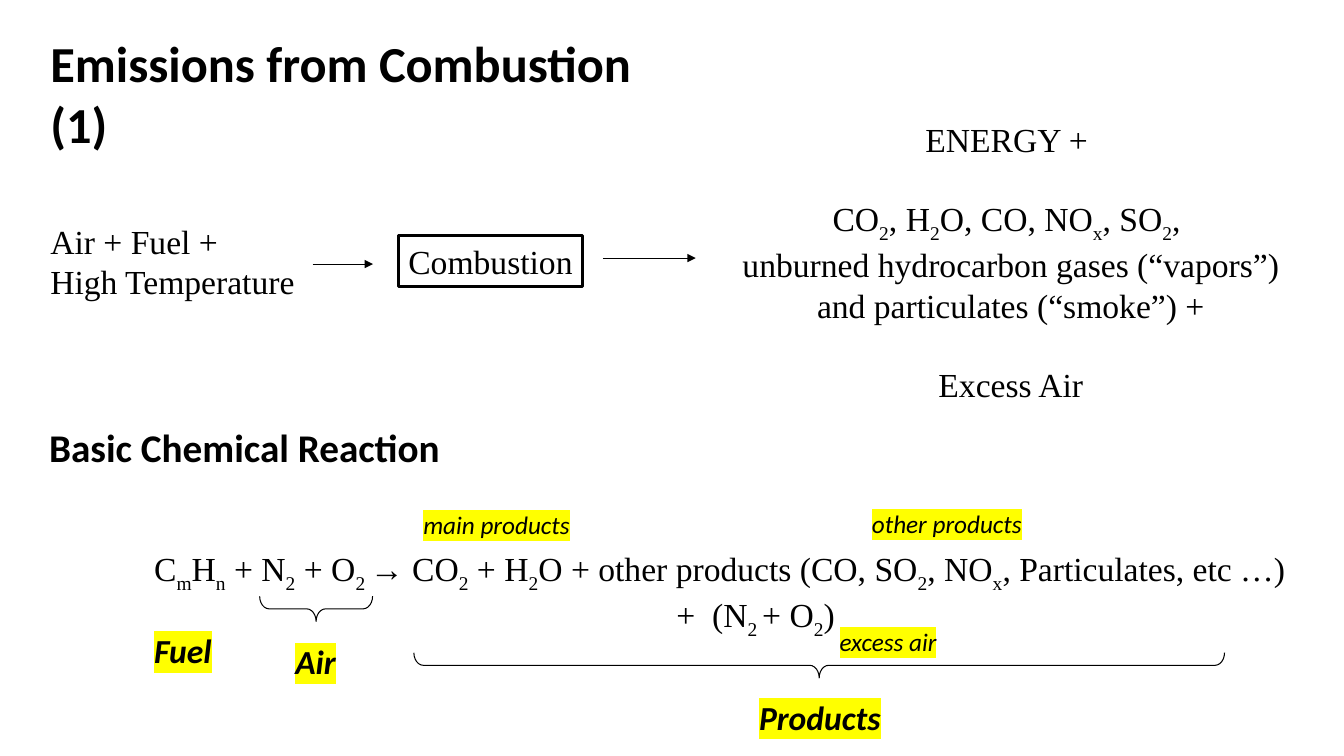
"""Build the slide on emissions from combustion and its basic reaction."""
from lxml.etree import SubElement
from pptx import Presentation
from pptx.dml.color import RGBColor
from pptx.enum.shapes import MSO_CONNECTOR as LINE, MSO_SHAPE as SHAPE
from pptx.enum.text import MSO_ANCHOR as ANCHOR, MSO_AUTO_SIZE as FIT, PP_ALIGN as ALIGN
from pptx.oxml.ns import qn
from pptx.util import Pt

PX = 9144
BLACK = RGBColor(0, 0, 0)
YELLOW = RGBColor(255, 255, 0)
SERIF, SANS = "Times New Roman", "Calibri"


def write(shape, lines, size, font, bold=False, italic=False, align=ALIGN.LEFT, mark=None):
    """Fill a shape with lines, where underscores enclose subscripts."""
    frame = shape.text_frame
    frame.auto_size = FIT.NONE
    for i, line in enumerate(lines):
        para = frame.add_paragraph() if i else frame.paragraphs[0]
        para.alignment = align
        for j, part in enumerate(line.split("_")):
            if not part:
                continue
            run = para.add_run()
            run.text = part
            run.font.size, run.font.name = Pt(size), font
            run.font.bold, run.font.italic = bold, italic
            run.font.color.rgb = BLACK
            props = run._r.get_or_add_rPr()
            if j % 2:
                props.set("baseline", "-25000")
            if mark is not None:
                glow = SubElement(props, qn("a:highlight"))
                SubElement(glow, qn("a:srgbClr")).set("val", str(mark))
                props.find(qn("a:latin")).addprevious(glow)
    return frame


def add_box(x, y, w, h, wrap=True):
    """Add a text box measured in px."""
    box = slide.shapes.add_textbox(x * PX, y * PX, w * PX, h * PX)
    box.text_frame.word_wrap = wrap
    return box


deck = Presentation()
deck.slide_width, deck.slide_height = 1333 * PX, 750 * PX
slide = deck.slides.add_slide(deck.slide_layouts[5])

title = slide.shapes.title
title.left, title.top, title.width, title.height = 40 * PX, 27 * PX, 638 * PX, 130 * PX
frame = write(title, ["Emissions from Combustion (1)"], 36, SANS, bold=True)
frame.vertical_anchor = ANCHOR.TOP
frame.word_wrap = True

write(add_box(40, 214, 271, 91), ["Air + Fuel +", "High Temperature"], 24, SERIF)

burn = slide.shapes.add_shape(SHAPE.RECTANGLE, 395 * PX, 234 * PX, 183 * PX, 50 * PX)
burn.shadow.inherit = False
burn.fill.background()
burn.line.color.rgb, burn.line.width = BLACK, Pt(2.25)
write(burn, ["Combustion"], 24, SERIF, align=ALIGN.CENTER)

for start, end, y in [(310, 370, 262), (598, 690, 256)]:
    arrow = slide.shapes.add_connector(LINE.STRAIGHT, start * PX, y * PX, end * PX, y * PX)
    arrow.line.color.rgb, arrow.line.width = BLACK, Pt(0.75)
    SubElement(arrow.line._get_or_add_ln(), qn("a:tailEnd")).set("type", "triangle")
    SubElement(arrow._element.spPr, qn("a:effectLst"))

output = [
    "ENERGY + ",
    "CO_2_, H_2_O, CO, NO_x_, SO_2_, ",
    "unburned hydrocarbon gases (“vapors”) and particulates (“smoke”) +",
    "Excess Air",
]
frame = write(add_box(700, 113, 605, 293), output, 24, SERIF, align=ALIGN.CENTER)
for i in (1, 3):
    frame.paragraphs[i].space_before = Pt(28)

write(add_box(39, 415, 413, 57, False), ["Basic Chemical Reaction"], 28, SANS, bold=True)

formula = [
    "C_m_H_n_ + N_2_ + O_2 _→ CO_2_ + H_2_O + other products "
    "(CO, SO_2_, NO_x_, Particulates, etc …)",
    "+  (N_2 _+ O_2_)",
]
frame = write(add_box(143, 539, 1185, 91), formula, 24, SERIF)
frame.paragraphs[1]._p.get_or_add_pPr().set("marL", str(518 * PX))

for x, y, w, h in [(301, 548, 25, 112), (800, 258, 25, 804)]:
    brace = slide.shapes.add_shape(SHAPE.LEFT_BRACE, x * PX, y * PX, w * PX, h * PX)
    brace.rotation = 270
    brace.adjustments[0], brace.adjustments[1] = 0.375, 0.5
    brace.shadow.inherit = False
    brace.fill.background()
    brace.line.color.rgb, brace.line.width = BLACK, Pt(0.75)

labels = [
    ("Fuel", 143, 620, 78, 24),
    ("Air", 283, 631, 61, 24),
    ("Products", 743, 686, 142, 24),
    ("main products", 410, 500, 167, 18),
    ("other products", 855, 499, 170, 18),
    ("excess air", 823, 616, 117, 18),
]
for word, x, y, w, size in labels:
    box = add_box(x, y, w, 50 if size == 24 else 40, False)
    write(box, [word], size, SANS, bold=size == 24, italic=True, mark=YELLOW)

deck.save("out.pptx")
